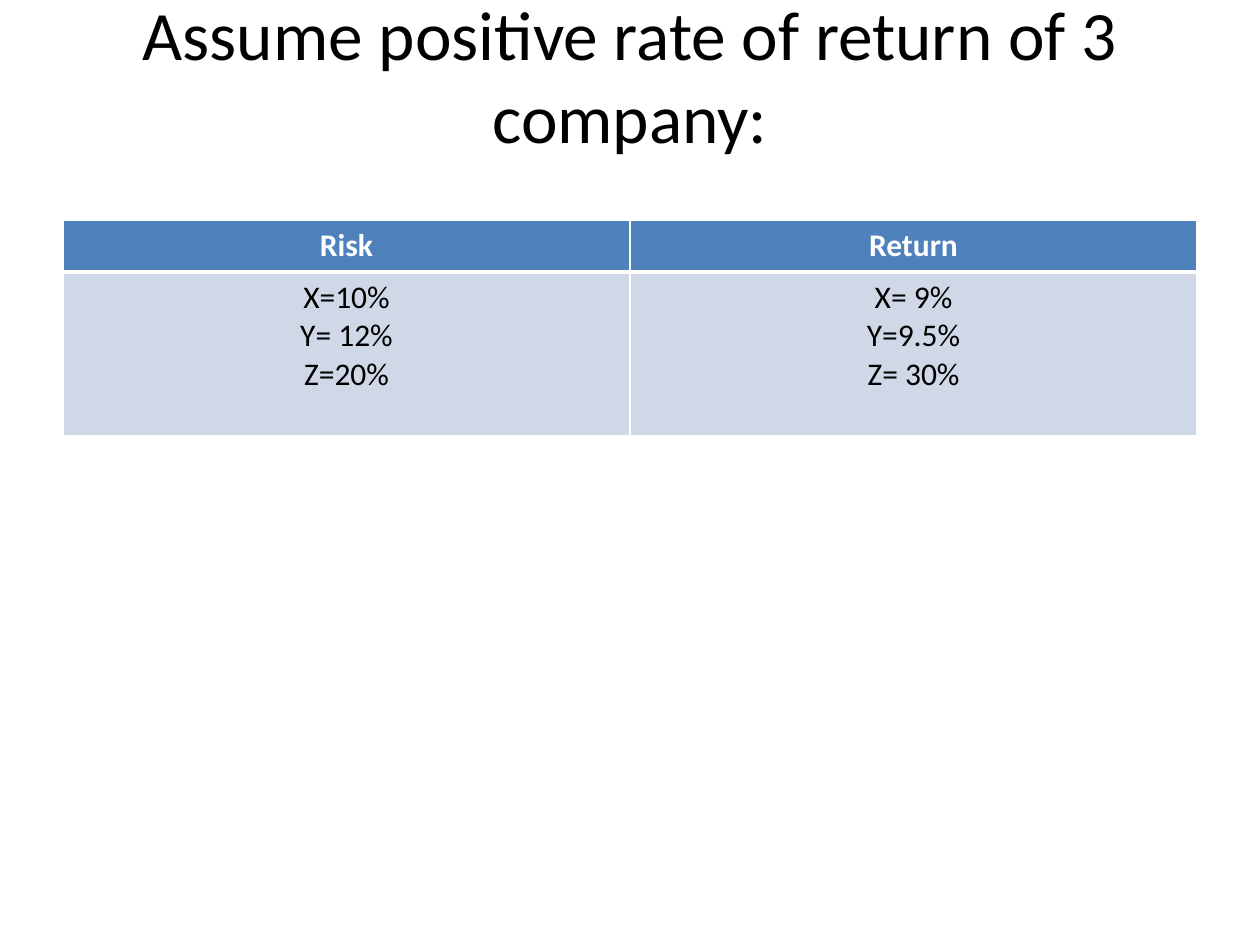
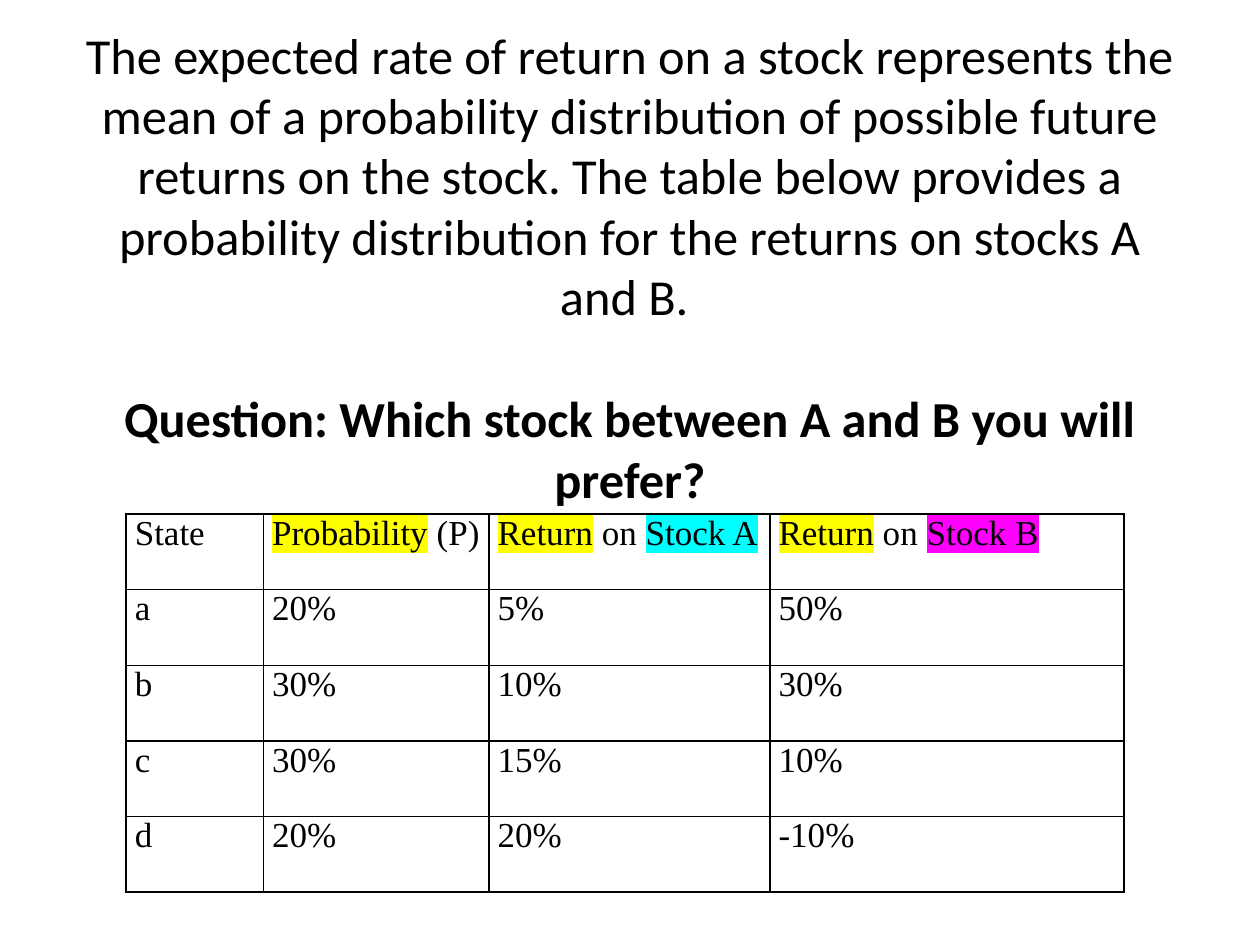
from lxml.etree import SubElement
from pptx import Presentation
from pptx.dml.color import RGBColor
from pptx.enum.text import MSO_ANCHOR, PP_ALIGN
from pptx.oxml.ns import qn
from pptx.util import Inches, Pt

BLACK = RGBColor(0x00, 0x00, 0x00)
WHITE = RGBColor(0xFF, 0xFF, 0xFF)
HEADER_BLUE = RGBColor(0x4F, 0x81, 0xBD)
PALE_BLUE = RGBColor(0xD0, 0xD8, 0xE8)
YELLOW = RGBColor(0xFF, 0xFF, 0x00)
CYAN = RGBColor(0x00, 0xFF, 0xFF)
MAGENTA = RGBColor(0xFF, 0x00, 0xFF)

SLIDE_WIDTH, SLIDE_HEIGHT = Inches(10), Inches(7.5)
COLUMN, ROW = SLIDE_WIDTH / 100, SLIDE_HEIGHT / 75

TITLE_FONT = {"name": "Calibri", "bold": False}
HEADER_FONT = {"name": "Calibri", "size": Pt(18), "bold": True}
BODY_FONT = HEADER_FONT | {"bold": False}
STOCK_FONT = {"name": "Times New Roman", "size": Pt(20), "bold": False}
STOCK_MARGINS = {"margin_left": Inches(0.07), "margin_right": Inches(0.07),
                 "margin_top": 0, "margin_bottom": 0}

RISK_RETURN = [
    (["Risk"], ["Return"]),
    (["X=10%", "Y= 12%", "Z=20%"], ["X= 9%", "Y=9.5%", "Z= 30%"]),
]
STOCK_HEADER = [
    [("State", None)],
    [("Probability", YELLOW), (" (P)", None)],
    [("Return", YELLOW), (" on ", None), ("Stock A", CYAN)],
    [("Return", YELLOW), (" on ", None), ("Stock B", MAGENTA)],
]
STOCK_RETURNS = [
    ("a", "20%", "5%", "50%"),
    ("b", "30%", "10%", "30%"),
    ("c", "30%", "15%", "10%"),
    ("d", "20%", "20%", "-10%"),
]


def grid_box(left, top, width, height):
    return (round(left * COLUMN), round(top * ROW),
            round(width * COLUMN), round(height * ROW))


def apply(target, values):
    for attribute, value in values.items():
        setattr(target, attribute, value)


def add_run(paragraph, text, font, color, highlight=None):
    run = paragraph.add_run()
    run.text = text
    apply(run.font, font)
    run.font.color.rgb = color
    if highlight is not None:
        properties = run.font._element
        mark = SubElement(properties, qn("a:highlight"))
        SubElement(mark, qn("a:srgbClr"), val=str(highlight))
        properties.find(qn("a:solidFill")).addnext(mark)


def set_borders(cell, color, **widths):
    """Draw the cell's edges; widths in points, keyed L, R, T and B."""
    properties = cell._tc.get_or_add_tcPr()
    for position, edge in enumerate("LRTB"):
        line = SubElement(properties, qn(f"a:ln{edge}"),
                          w=str(Pt(widths.get(edge, 1))))
        fill = SubElement(line, qn("a:solidFill"))
        SubElement(fill, qn("a:srgbClr"), val=str(color))
        properties.insert(position, line)


def add_title(slide, box, paragraphs, size, gap=0, margin_bottom=Inches(0.05)):
    frame = slide.shapes.add_textbox(*box).text_frame
    apply(frame, {"word_wrap": True, "vertical_anchor": MSO_ANCHOR.MIDDLE,
                  "margin_bottom": margin_bottom})
    for index, (text, style) in enumerate(paragraphs):
        paragraph = frame.add_paragraph() if index else frame.paragraphs[0]
        paragraph.alignment = PP_ALIGN.CENTER
        if index:
            paragraph.space_before = Pt(gap)
        add_run(paragraph, text, TITLE_FONT | {"size": Pt(size)} | style, BLACK)


def add_grid(slide, box, column_shares, row_shares):
    """Add an unbanded table whose columns and rows split the box by shares."""
    table = slide.shapes.add_table(len(row_shares), len(column_shares), *box).table
    apply(table, {"first_row": False, "horz_banding": False})
    for column, share in zip(table.columns, column_shares):
        column.width = round(box[2] * share / sum(column_shares))
    for row, share in zip(table.rows, row_shares):
        row.height = round(box[3] * share / sum(row_shares))
    return table


def add_risk_return_table(slide, box):
    table = add_grid(slide, box, (1, 1), (4.1, 13))
    styles = [(HEADER_BLUE, HEADER_FONT, WHITE, {"B": 3}),
              (PALE_BLUE, BODY_FONT, BLACK, {"T": 3})]
    for row, texts, style in zip(table.rows, RISK_RETURN, styles):
        fill, font, color, edges = style
        for cell, lines in zip(row.cells, texts):
            cell.fill.solid()
            cell.fill.fore_color.rgb = fill
            set_borders(cell, WHITE, **edges)
            for index, line in enumerate(lines):
                frame = cell.text_frame
                paragraph = frame.add_paragraph() if index else frame.paragraphs[0]
                paragraph.alignment = PP_ALIGN.CENTER
                add_run(paragraph, line, font, color)


def add_stock_table(slide, box):
    rows = [STOCK_HEADER] + [[[(value, None)] for value in state]
                             for state in STOCK_RETURNS]
    table = add_grid(slide, box, (10.9, 17.9, 22.3, 28.1), [1] * len(rows))
    for row, contents in zip(table.rows, rows):
        for cell, pieces in zip(row.cells, contents):
            cell.fill.background()
            set_borders(cell, BLACK)
            apply(cell, STOCK_MARGINS)
            paragraph = cell.text_frame.paragraphs[0]
            paragraph.alignment = PP_ALIGN.JUSTIFY
            for text, highlight in pieces:
                add_run(paragraph, text, STOCK_FONT, BLACK, highlight)


def build_risk_return_slide(slide):
    add_title(slide, grid_box(5, 3, 90, 12.5),
              [("Assume positive rate of return of 3 company:", {})],
              size=39.6, margin_bottom=Inches(0.72))
    add_risk_return_table(slide, grid_box(5, 17.5, 90, 17.1))


def build_stock_choice_slide(slide):
    add_title(slide, grid_box(5, 3, 90, 36.2), [
        ("The expected rate of return on a stock represents the mean of a "
         "probability distribution of possible future returns on the stock. "
         "The table below provides a probability distribution for the returns "
         "on stocks A and B. ", {}),
        ("Question: Which stock between A and B you will prefer?", {"bold": True}),
    ], size=28.8, gap=35)
    add_stock_table(slide, grid_box(10, 40.8, 79.2, 30))


def main():
    deck = Presentation()
    apply(deck, {"slide_width": SLIDE_WIDTH, "slide_height": SLIDE_HEIGHT})
    blank = deck.slide_layouts[6]
    for build in (build_risk_return_slide, build_stock_choice_slide):
        build(deck.slides.add_slide(blank))
    deck.save("out.pptx")


if __name__ == "__main__":
    main()
